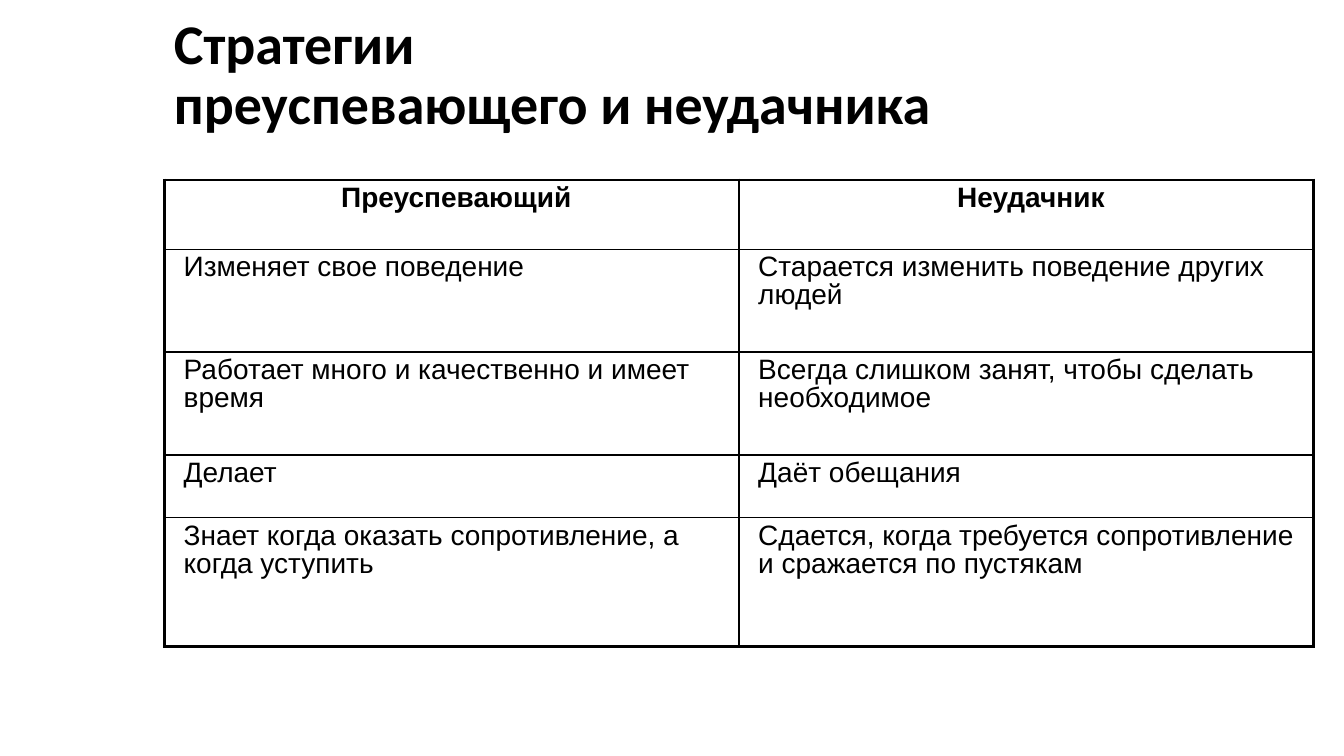
from lxml.etree import SubElement
from pptx import Presentation
from pptx.dml.color import RGBColor
from pptx.enum.text import MSO_ANCHOR, MSO_AUTO_SIZE, PP_ALIGN
from pptx.oxml.ns import qn
from pptx.util import Pt

BLACK, WHITE = "000000", "FFFFFF"
THIN, THICK = 1, 2.25
COLUMN_WIDTH = 410.4
ROW_HEIGHTS = [49.5, 73.5, 73.5, 45, 92]
STRATEGIES = [
    ("Преуспевающий", "Неудачник"),
    ("Изменяет свое поведение", "Старается изменить поведение других людей"),
    ("Работает много и качественно и имеет время",
     "Всегда слишком занят, чтобы сделать необходимое"),
    ("Делает", "Даёт обещания"),
    ("Знает когда оказать сопротивление, а когда уступить",
     "Сдается, когда требуется сопротивление и сражается по пустякам"),
]


def color(value):
    return RGBColor.from_string(value)


def format_para(para, font_name, size, bold, align=PP_ALIGN.LEFT):
    para.alignment = align
    para.line_spacing = 0.9
    para.font.name = font_name
    para.font.size = Pt(size)
    para.font.bold = bold
    para.font.color.rgb = color(BLACK)


def add_title(page, text):
    title = page.shapes.title
    title.left, title.top = Pt(117), Pt(9.4)
    title.width, title.height = Pt(843), Pt(90)
    frame = title.text_frame
    frame.text = text
    frame.auto_size = MSO_AUTO_SIZE.NONE
    frame.vertical_anchor = MSO_ANCHOR.MIDDLE
    format_para(frame.paragraphs[0], "Calibri", 40, True)


def set_borders(cell, widths):
    """Draw the left, right, top and bottom borders, in that order."""
    properties = cell._tc.get_or_add_tcPr()
    for side, width in zip("LRTB", widths):
        line = SubElement(properties, qn(f"a:ln{side}"), w=str(Pt(width)))
        fill = SubElement(line, qn("a:solidFill"))
        SubElement(fill, qn("a:srgbClr"), val=BLACK)


def fill_cell(cell, text, is_header):
    cell.text = text
    cell.fill.solid()
    cell.fill.fore_color.rgb = color(WHITE)
    para = cell.text_frame.paragraphs[0]
    align = PP_ALIGN.CENTER if is_header else PP_ALIGN.LEFT
    format_para(para, "Arial", 20, is_header, align)
    para.space_before = Pt(10)
    indent = para._p.get_or_add_pPr()
    indent.set("marL", str(Pt(6.5)))
    indent.set("indent", "0")


def add_strategy_table(page, rows):
    row_count, column_count = len(rows), len(rows[0])
    frame = page.shapes.add_table(
        row_count, column_count, Pt(117.5), Pt(128.5),
        Pt(COLUMN_WIDTH * column_count), Pt(sum(ROW_HEIGHTS)))
    table = frame.table
    table.first_row = table.horz_banding = False
    for column in table.columns:
        column.width = Pt(COLUMN_WIDTH)
    for r, texts in enumerate(rows):
        table.rows[r].height = Pt(ROW_HEIGHTS[r])
        for c, text in enumerate(texts):
            # Outer edges are thick, inner ones thin
            outer = (c == 0, c == column_count - 1,
                     r == 0, r == row_count - 1)
            cell = table.cell(r, c)
            set_borders(cell, [THICK if edge else THIN for edge in outer])
            fill_cell(cell, text, r == 0)


def main():
    deck = Presentation()
    deck.slide_width, deck.slide_height = Pt(960), Pt(540)
    # Title-only page
    page = deck.slides.add_slide(deck.slide_layouts[5])
    add_title(page, "Стратегии\vпреуспевающего и неудачника")
    add_strategy_table(page, STRATEGIES)
    deck.save("out.pptx")


if __name__ == "__main__":
    main()
